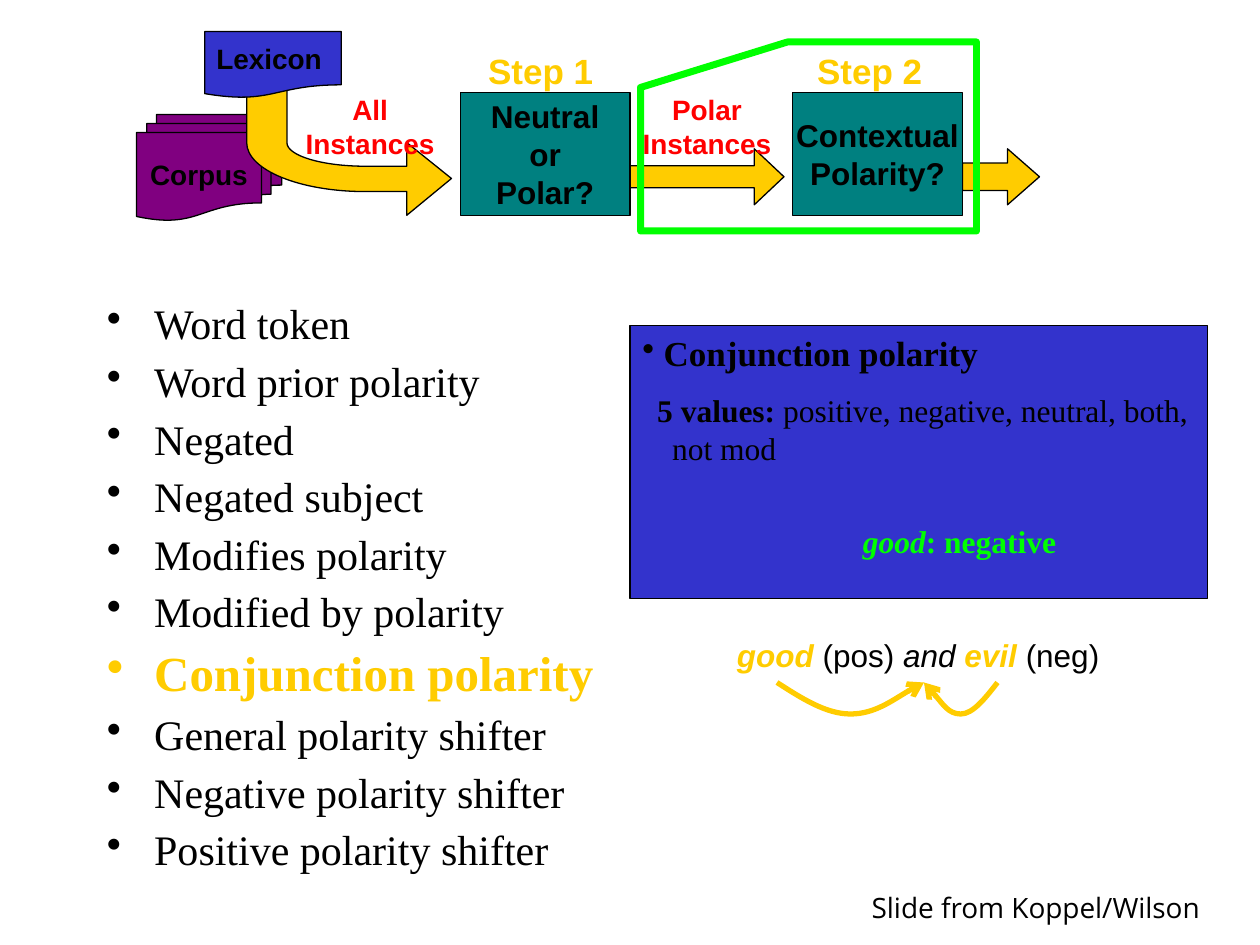
"""Build a slide on the features used for contextual polarity."""
from dataclasses import dataclass, replace
from typing import Optional

from lxml import etree
from pptx import Presentation
from pptx.dml.color import RGBColor
from pptx.enum.shapes import MSO_SHAPE
from pptx.enum.text import MSO_ANCHOR, PP_ALIGN
from pptx.oxml.ns import qn
from pptx.util import Pt

RECT = MSO_SHAPE.RECTANGLE
ARROW = MSO_SHAPE.RIGHT_ARROW
STACK = MSO_SHAPE.FLOWCHART_MULTIDOCUMENT
PAGE = MSO_SHAPE.FLOWCHART_DOCUMENT
STEP = MSO_SHAPE.FLOWCHART_PROCESS
MIDDLE = MSO_ANCHOR.MIDDLE
LEFT, CENTER = PP_ALIGN.LEFT, PP_ALIGN.CENTER
BLACK, GOLD, BLUE, GREEN = "000000", "FFCC00", "3333CC", "00FF00"
RED, TEAL, PLUM = "FF0000", "008080", "800080"


@dataclass(frozen=True)
class Style:
    size: float
    font: str = "Arial"
    color: str = BLACK
    bold: bool = False
    italic: bool = False


@dataclass(frozen=True)
class Box:
    left: float
    top: float
    width: float
    height: float


@dataclass(frozen=True)
class Node:
    kind: int
    box: Box
    fill: str
    text: str = ""
    style: Optional[Style] = None
    adjust: tuple = ()


@dataclass(frozen=True)
class Label:
    box: Box
    text: str
    style: Style
    align: int = CENTER


@dataclass(frozen=True)
class Route:
    points: tuple
    curves: tuple = ()
    closed: bool = False
    fill: str = ""
    line: str = BLACK
    width: float = 0.75
    head: bool = False


SERIF = Style(24, "Times New Roman")
HEAD = replace(SERIF, size=20, bold=True)
BODY = replace(SERIF, size=18)
NOTE = Style(18)
NAME = Style(16, bold=True)
TASK = Style(18, bold=True)
TITLE = Style(20, color=GOLD, bold=True)
FLOW = replace(NAME, color=RED)
KEY = Style(18, color=GOLD, bold=True, italic=True)

ITEMS = ("Word token", "Word prior polarity", "Negated", "Negated subject",
         "Modifies polarity", "Modified by polarity", "Conjunction polarity",
         "General polarity shifter", "Negative polarity shifter",
         "Positive polarity shifter")
FOCUS = "Conjunction polarity"

ARROWS = (
    Node(ARROW, Box(355.5, 85, 92.5, 32), GOLD, adjust=(0.39, 0.53)),
    Node(ARROW, Box(550, 85, 44, 32), GOLD, adjust=(0.49, 0.57)),
)
CORPUS = Node(STACK, Box(78, 65.5, 83, 60.5), PLUM, "Corpus", NAME)
NODES = (
    Node(PAGE, Box(117, 18, 78, 38), BLUE, "Lexicon ", NAME),
    Node(STEP, Box(263, 53, 97, 70), TEAL, "Neutral\nor\nPolar?", TASK),
    Node(STEP, Box(453, 53, 97, 70), TEAL, "Contextual\nPolarity?", TASK),
)
LABELS = (
    Label(Box(263, 24.5, 92, 31), "Step 1", TITLE),
    Label(Box(453, 24.5, 88, 31), "Step 2", TITLE),
    Label(Box(165.5, 49.5, 92, 46), "All\nInstances", FLOW),
    Label(Box(355.5, 49.5, 97, 46), "Polar\nInstances", FLOW),
    Label(Box(491, 505.5, 229, 27), "Slide from Koppel/Wilson",
          Style(16, "Open Sans"), LEFT),
)
BEND = Route(
    ((258, 102), (232.5, 123), (232.5, 109.5), (209, 109.5), (171, 109.5),
     (141, 97), (141, 81.5), (141, 50), (164, 50), (164, 81.5), (164, 89),
     (184, 95), (209, 95), (232.5, 95), (232.5, 81.5)),
    (4, 10), True, GOLD)
FRAME = Route(((366, 50), (366, 132), (558, 132), (558, 24), (450, 24)),
              closed=True, line=GREEN, width=4)
LINKS = (
    ((444, 390), (458, 399), (472, 408), (486, 408), (500, 408), (521, 393),
     (528, 390)),
    ((570, 390), (563, 399), (556, 408), (549, 408), (542, 408), (531, 393),
     (528, 390)),
)


def tint(code: str) -> RGBColor:
    return RGBColor.from_string(code)


def dress(run, style: Style) -> None:
    font = run.font
    font.name, font.size = style.font, Pt(style.size)
    font.bold, font.italic = style.bold, style.italic
    font.color.rgb = tint(style.color)


def write(frame, text: str, style: Style, align: int) -> None:
    frame.text = text
    for para in frame.paragraphs:
        para.alignment = align
        for run in para.runs:
            dress(run, style)


def mix(para, parts: tuple) -> None:
    para.alignment = LEFT
    for text, style in parts:
        run = para.add_run()
        run.text = text
        dress(run, style)


def inset(para, left: float, first: float, bullet: bool = False) -> None:
    props = para._p.get_or_add_pPr()
    props.set("marL", str(Pt(left)))
    props.set("indent", str(Pt(first)))
    if bullet:
        etree.SubElement(props, qn("a:buChar")).set("char", "•")


def paint(shape, fill: str, line: str = BLACK, width: float = 0.75) -> None:
    shape.shadow.inherit = False
    if fill:
        shape.fill.solid()
        shape.fill.fore_color.rgb = tint(fill)
    else:
        shape.fill.background()
    shape.line.color.rgb = tint(line)
    shape.line.width = Pt(width)


def place(box: Box) -> tuple:
    return Pt(box.left), Pt(box.top), Pt(box.width), Pt(box.height)


def frame_at(slide, box: Box):
    frame = slide.shapes.add_textbox(*place(box)).text_frame
    frame.word_wrap = True
    return frame


def draw_node(slide, node: Node) -> None:
    shape = slide.shapes.add_shape(node.kind, *place(node.box))
    paint(shape, node.fill)
    for spot, value in enumerate(node.adjust):
        shape.adjustments[spot] = value
    if node.text:
        shape.text_frame.word_wrap = False
        shape.text_frame.vertical_anchor = MIDDLE
        write(shape.text_frame, node.text, node.style, CENTER)


def draw_route(slide, route: Route) -> None:
    start, *rest = [(Pt(x), Pt(y)) for x, y in route.points]
    pen = slide.shapes.build_freeform(*start)
    pen.add_line_segments(rest, close=route.closed)
    shape = pen.convert_to_shape()
    paint(shape, route.fill, route.line, route.width)
    steps = list(shape._element.find(".//" + qn("a:path")))
    for first in route.curves:
        bend = etree.Element(qn("a:cubicBezTo"))
        steps[first].addprevious(bend)
        for step in steps[first:first + 3]:
            bend.append(step[0])
            step.getparent().remove(step)
    if route.head:
        line = shape._element.find(".//" + qn("a:ln"))
        etree.SubElement(line, qn("a:tailEnd")).set("type", "arrow")


def draw_list(slide) -> None:
    frame = frame_at(slide, Box(54, 170, 300, 310))
    write(frame, "\n".join(ITEMS), SERIF, LEFT)
    for para in frame.paragraphs:
        para.line_spacing, para.space_before = 0.9, Pt(7)
        inset(para, 27, -27, True)
        if para.text == FOCUS:
            dress(para.runs[0], replace(SERIF, size=28, color=GOLD, bold=True))


def draw_panel(slide) -> None:
    shape = slide.shapes.add_shape(RECT, *place(Box(360, 186, 330, 156)))
    paint(shape, BLUE)
    frame = shape.text_frame
    frame.word_wrap, frame.vertical_anchor = True, MSO_ANCHOR.TOP
    head, values, sample = (frame.paragraphs[0], frame.add_paragraph(),
                            frame.add_paragraph())
    bold = replace(BODY, bold=True)
    lime = replace(bold, color=GREEN)
    mix(head, ((" ", replace(HEAD, bold=False)), (FOCUS, HEAD)))
    mix(values, (("5 values:", bold),
                 (" positive, negative, neutral, both, not mod", BODY)))
    mix(sample, (("good", replace(lime, italic=True)), (": negative", lime)))
    for para in frame.paragraphs:
        para.space_before = Pt(10)
    sample.line_spacing = 2.0
    inset(head, 0, 0, True)
    inset(values, 17, -8.5)
    inset(sample, 126, 0)


def main() -> None:
    deck = Presentation()
    deck.slide_width, deck.slide_height = Pt(720), Pt(540)
    slide = deck.slides.add_slide(deck.slide_layouts[6])
    draw_list(slide)
    draw_panel(slide)
    phrase = frame_at(slide, Box(414, 360, 228, 29)).paragraphs[0]
    mix(phrase, (("good ", KEY), ("(pos)", NOTE),
                 (" and ", replace(NOTE, italic=True)),
                 ("evil ", KEY), ("(neg)", NOTE)))
    for points in LINKS:
        draw_route(slide, Route(points, (1, 4), line=GOLD, width=3, head=True))
    for node in (*ARROWS, CORPUS):
        draw_node(slide, node)
    draw_route(slide, BEND)
    for node in NODES:
        draw_node(slide, node)
    for label in LABELS:
        write(frame_at(slide, label.box), label.text, label.style, label.align)
    draw_route(slide, FRAME)
    deck.save("out.pptx")


if __name__ == "__main__":
    main()
